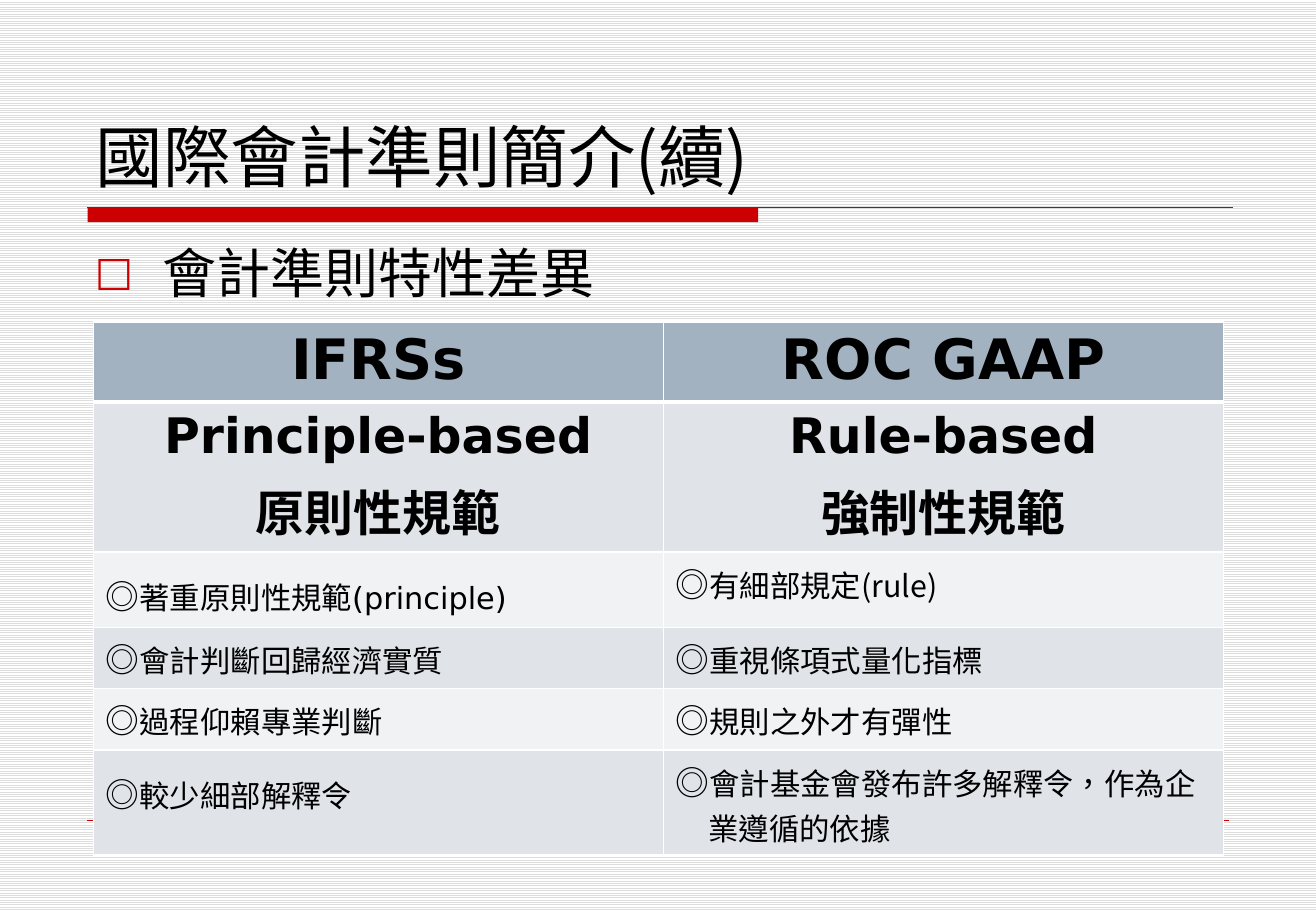
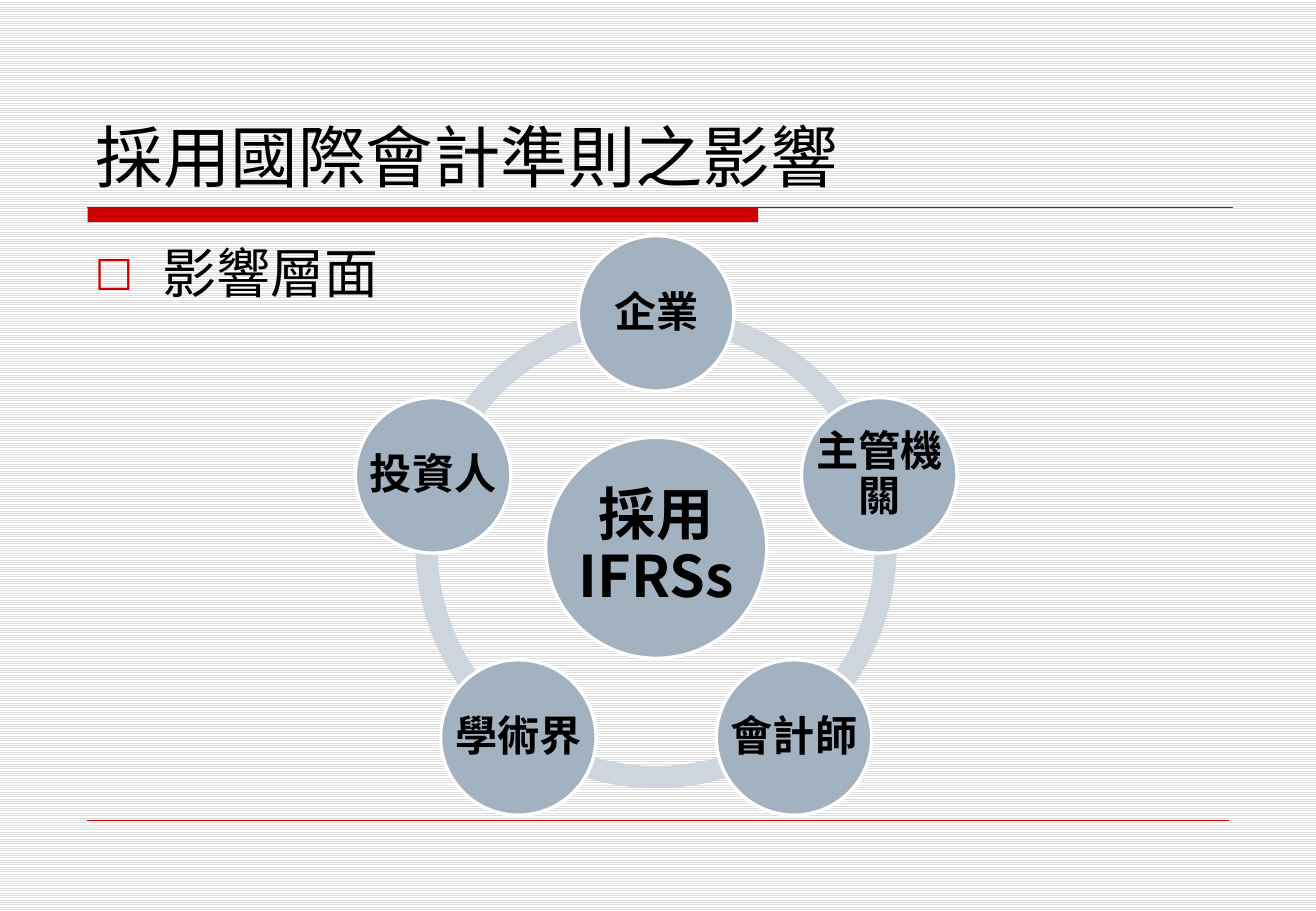
from math import cos, radians, sin

from lxml.etree import SubElement
from pptx import Presentation
from pptx.dml.color import RGBColor
from pptx.enum.dml import MSO_PATTERN
from pptx.enum.shapes import MSO_CONNECTOR, MSO_SHAPE
from pptx.enum.text import MSO_ANCHOR, MSO_AUTO_SIZE, PP_ALIGN
from pptx.oxml.ns import qn
from pptx.util import Inches, Pt

CJK = "Noto Sans CJK SC"
SANS = "DejaVu Sans"
RED, BLACK, WHITE = "CC0000", "000000", "FFFFFF"
BLUE, MIST, PALE, ARC = "A3B2C1", "E0E4E9", "F0F2F4", "CED5DD"
MID = {"alignment": PP_ALIGN.CENTER}
HEADS = [("IFRSs",), ("ROC GAAP",)]
BASES = [("Principle-based", "原則性規範"), ("Rule-based", "強制性規範")]
POINTS = [
    ("著重原則性規範(principle)", "有細部規定(rule)"),
    ("會計判斷回歸經濟實質", "重視條項式量化指標"),
    ("過程仰賴專業判斷", "規則之外才有彈性"),
    ("較少細部解釋令", "會計基金會發布許多解釋令，作為企業遵循的依據"),
]
COLS = [4.69, 4.61]
ROWS = [0.66, 1.23, 0.62, 0.5, 0.5, 0.86]
NODES = ["企業", "主管機關", "會計師", "學術界", "投資人"]


def color(code):
    """Turn a hex string into a colour."""
    return RGBColor.from_string(code)


def apply(item, form):
    """Set each attribute named in a dict of format values."""
    for key, value in form.items():
        setattr(item, key, value)


def paint(shape, fill, line=None, width=0):
    """Give a shape a flat fill and an optional outline."""
    shape.shadow.inherit = False
    shape.fill.solid()
    shape.fill.fore_color.rgb = color(fill)
    if line:
        shape.line.color.rgb = color(line)
        shape.line.width = Pt(width)
    else:
        shape.line.fill.background()


def write(para, text, size, face=CJK, bold=False):
    """Add one formatted run to a paragraph."""
    run = para.add_run()
    run.text = text
    apply(run.font, {"size": Pt(size), "bold": bold})
    run.font.color.rgb = color(BLACK)
    run.font.name = face
    props = run._r.get_or_add_rPr()
    props.set("lang", "zh-TW")
    SubElement(props, qn("a:ea")).set("typeface", CJK)


def setup(frame, anchor, side, top):
    """Set the wrapping, anchor and insets of a text frame."""
    apply(frame, {
        "word_wrap": True, "auto_size": MSO_AUTO_SIZE.NONE,
        "vertical_anchor": anchor,
        "margin_left": Inches(side), "margin_right": Inches(side),
        "margin_top": Inches(top), "margin_bottom": Inches(top),
    })


def indent(para, size):
    """Hang the first line of a paragraph."""
    props = para._p.get_or_add_pPr()
    props.set("marL", str(Inches(size)))
    props.set("indent", str(-Inches(size)))
    return props


def rule(slide, left, top, width, weight):
    """Draw a level red line."""
    line = slide.shapes.add_connector(
        MSO_CONNECTOR.STRAIGHT, Inches(left), Inches(top),
        Inches(left + width), Inches(top))
    line.line.color.rgb = color(RED)
    line.line.width = Pt(weight)
    SubElement(line._element.spPr, qn("a:effectLst"))


def start(deck, title, topic):
    """Add a slide with its title, bands and topic line."""
    slide = deck.slides.add_slide(deck.slide_layouts[5])
    band = slide.shapes.add_shape(
        MSO_SHAPE.RECTANGLE, Inches(0.72), Inches(1.71),
        Inches(5.52), Inches(0.12))
    paint(band, RED)
    rule(slide, 0.72, 1.71, 9.43, 0.75)
    rule(slide, 0.72, 6.75, 9.39, 0.25)

    head = slide.shapes.title
    apply(head, {"left": Inches(0.68), "top": Inches(0.33),
                 "width": Inches(9.48), "height": Inches(1.33)})
    setup(head.text_frame, MSO_ANCHOR.BOTTOM, 0.11, 0.05)
    para = head.text_frame.paragraphs[0]
    para.alignment = PP_ALIGN.LEFT
    write(para, title, 40)

    body = slide.shapes.add_textbox(
        Inches(0.67), Inches(1.92), Inches(9.48), Inches(0.7))
    setup(body.text_frame, MSO_ANCHOR.TOP, 0.11, 0.05)
    para = body.text_frame.paragraphs[0]
    props = indent(para, 0.56)
    SubElement(SubElement(props, qn("a:buClr")), qn("a:srgbClr")).set("val", RED)
    SubElement(props, qn("a:buSzPct")).set("val", "75000")
    SubElement(props, qn("a:buFont")).set("typeface", SANS)
    SubElement(props, qn("a:buChar")).set("char", "□")
    write(para, topic, 32)
    return slide


def dress(cell, fill, top=1, bottom=1):
    """Give a cell white borders and a fill."""
    props = cell._tc.get_or_add_tcPr()
    for side, width in zip("LRTB", (1, 1, top, bottom)):
        edge = SubElement(props, qn("a:ln" + side))
        edge.set("w", str(Pt(width)))
        tint = SubElement(edge, qn("a:solidFill"))
        SubElement(tint, qn("a:srgbClr")).set("val", WHITE)
    cell.fill.solid()
    cell.fill.fore_color.rgb = color(fill)


def label(cell, lines, size):
    """Write bold centred lines in a cell."""
    for i, text in enumerate(lines):
        para = cell.text_frame.add_paragraph() if i else cell.text_frame.paragraphs[0]
        apply(para, MID)
        if i:
            para.space_before = Pt(size * 0.2)
        write(para, text, size, SANS, True)


def compare(slide, left, top):
    """Place the table that compares the two standards."""
    grid = slide.shapes.add_table(
        len(ROWS), len(COLS), Inches(left), Inches(top),
        Inches(sum(COLS)), Inches(sum(ROWS))).table
    apply(grid, {"first_row": False, "horz_banding": False})
    for col, width in zip(grid.columns, COLS):
        col.width = Inches(width)
    for row, height in zip(grid.rows, ROWS):
        row.height = Inches(height)
    for c in range(len(COLS)):
        dress(grid.cell(0, c), BLUE, bottom=3)
        label(grid.cell(0, c), HEADS[c], 33)
        dress(grid.cell(1, c), MIST, top=3)
        label(grid.cell(1, c), BASES[c], 29)
        for r, pair in enumerate(POINTS):
            cell = grid.cell(r + 2, c)
            dress(cell, MIST if r % 2 else PALE)
            para = cell.text_frame.paragraphs[0]
            if c:
                indent(para, 0.27)
            elif r in (0, 3):
                para.line_spacing = 1.25
            write(para, "◎", 20, SANS)
            write(para, pair[c], 18, CJK if c else SANS)


def disc(slide, x, y, size, text, points, inset):
    """Place a labelled circle around a centre."""
    box = [Inches(v) for v in (x - size / 2, y - size / 2, size, size)]
    paint(slide.shapes.add_shape(MSO_SHAPE.OVAL, *box), BLUE, WHITE, 2)
    frame = slide.shapes.add_textbox(*box).text_frame
    setup(frame, MSO_ANCHOR.MIDDLE, inset, inset)
    para = frame.paragraphs[0]
    apply(para, {**MID, "line_spacing": 0.9})
    write(para, text, points, bold=True)


def wheel(slide, x, y, size):
    """Place a ring of circles around a hub."""
    step = 360 / len(NODES)
    turns = [270 + step * i for i in range(len(NODES))]
    for turn in turns:
        arc = slide.shapes.add_shape(
            MSO_SHAPE.BLOCK_ARC, Inches(x - size / 2), Inches(y - size / 2),
            Inches(size), Inches(size))
        paint(arc, ARC)
        ends = (turn % 360, (turn + step) % 360)
        for i, value in enumerate((ends[0] * 0.6, ends[1] * 0.6, 0.046)):
            arc.adjustments[i] = value
    disc(slide, x, y, 1.82, "採用IFRSs", 34, 0.05)
    reach = size / 2 - 0.05
    for turn, text in zip(turns, NODES):
        angle = radians(turn)
        disc(slide, x + reach * cos(angle), y + reach * sin(angle),
             1.28, text, 25, 0.03)


def main():
    """Build and save the deck."""
    deck = Presentation()
    apply(deck, {"slide_width": Inches(10.83), "slide_height": Inches(7.5)})
    back = deck.slide_master.background.fill
    back.patterned()
    back.pattern = MSO_PATTERN.LIGHT_HORIZONTAL
    back.fore_color.rgb = color("DDDDDD")
    back.back_color.rgb = color(WHITE)
    compare(start(deck, "國際會計準則簡介(續)", "會計準則特性差異"), 0.77, 2.65)
    wheel(start(deck, "採用國際會計準則之影響", "影響層面"), 5.4, 4.51, 3.96)
    deck.save("out.pptx")


if __name__ == "__main__":
    main()
